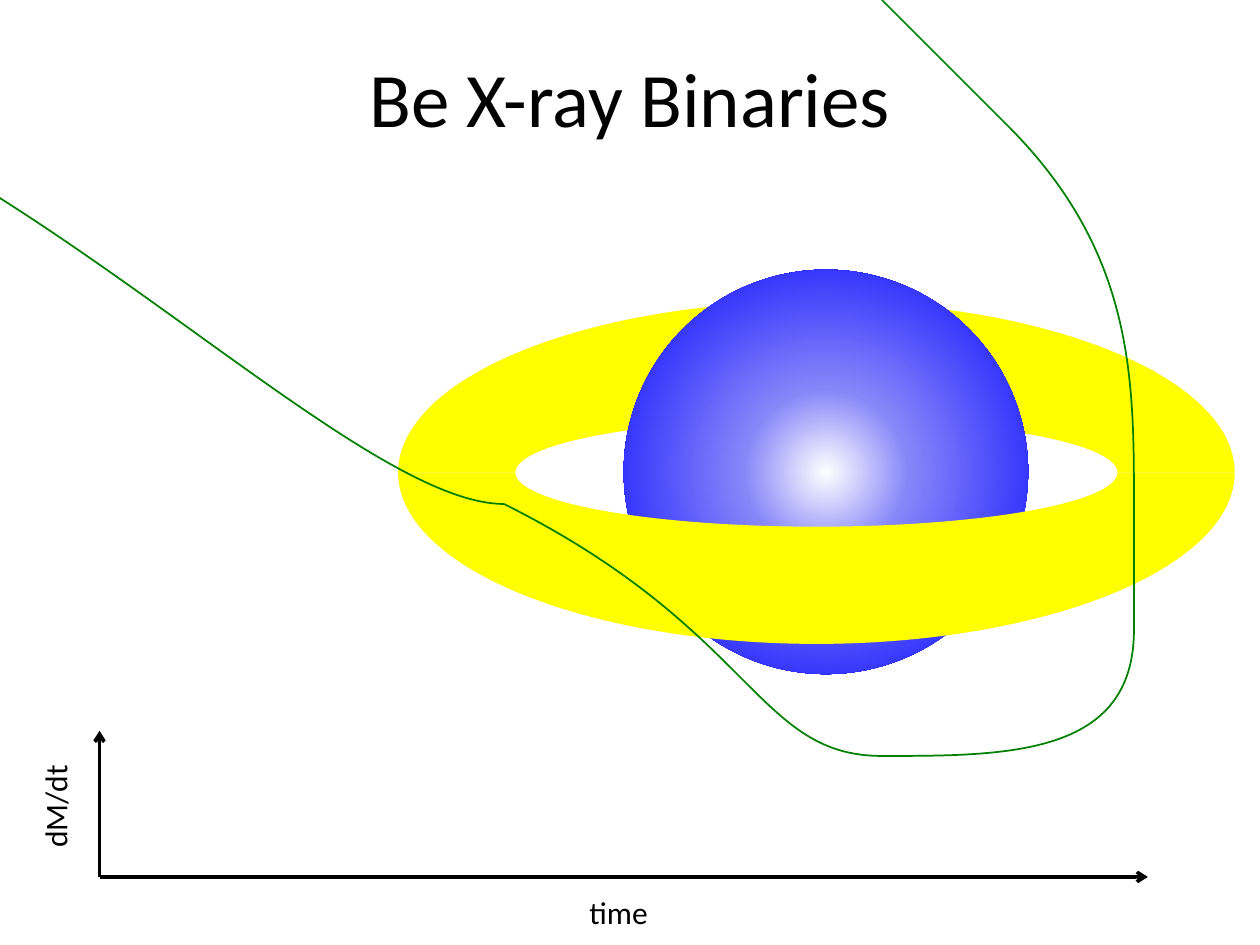
"""Build a slide showing a Be X-ray binary with its orbit and accretion-rate axes."""
from lxml import etree
from pptx import Presentation
from pptx.dml.color import RGBColor
from pptx.enum import shapes, text
from pptx.oxml import parse_xml
from pptx.oxml.ns import nsdecls, qn
from pptx.util import Inches, Pt

BLACK = RGBColor(0x00, 0x00, 0x00)
YELLOW = RGBColor(0xFF, 0xFF, 0x00)
GREEN = RGBColor(0x00, 0x80, 0x00)
STAR_STOPS = [
    (0, RGBColor(0xFF, 0xFF, 0xFF)),
    (29, RGBColor(0x86, 0x86, 0xF9)),
    (100, RGBColor(0x00, 0x00, 0xFF)),
]
ORBIT_START = (-0.59, 1.18)
ORBIT_CONTROLS = [
    (0.99, 2.33), (2.86, 3.62), (4.19, 4.37),
    (5.51, 5.12), (6.5, 5.5), (7.33, 5.67),
    (8.16, 5.83), (8.84, 5.68), (9.17, 5.37),
    (9.49, 5.06), (9.46, 4.5), (9.28, 3.83),
    (9.09, 3.16), (8.58, 2.09), (8.06, 1.35),
    (7.53, 0.62), (6.65, -0.07), (6.11, -0.57),
]


def style_arrow(shape, color, width):
    shape.line.color.rgb = color
    shape.line.width = Pt(width)
    properties = shape.element.spPr
    etree.SubElement(properties.find(qn("a:ln")), qn("a:tailEnd"), type="arrow")
    if properties.find(qn("a:effectLst")) is None:
        etree.SubElement(properties, qn("a:effectLst"))


def write_text(shape, wording, size, alignment):
    frame = shape.text_frame
    frame.text = wording
    frame.word_wrap = False
    frame.auto_size = text.MSO_AUTO_SIZE.SHAPE_TO_FIT_TEXT
    frame.vertical_anchor = text.MSO_ANCHOR.TOP
    paragraph = frame.paragraphs[0]
    paragraph.alignment = alignment
    font = paragraph.runs[0].font
    font.name = "Calibri"
    font.size = Pt(size)
    font.color.rgb = BLACK


presentation = Presentation()
presentation.slide_width = Inches(10)
presentation.slide_height = Inches(7.5)
slide = presentation.slides.add_slide(presentation.slide_layouts[5])

title = slide.shapes.title
title.left, title.top = Inches(2.81), Inches(0.35)
title.width, title.height = Inches(4.38), Inches(0.84)
write_text(title, "Be X-ray Binaries", 44, text.PP_ALIGN.CENTER)

disk_back, star, disk_front = [
    slide.shapes.add_shape(kind, *map(Inches, box))
    for kind, box in [
        (shapes.MSO_SHAPE.BLOCK_ARC, (3.16, 2.39, 6.64, 2.72)),
        (shapes.MSO_SHAPE.OVAL, (4.95, 2.14, 3.21, 3.21)),
        (shapes.MSO_SHAPE.BLOCK_ARC, (3.16, 2.39, 6.64, 2.72)),
    ]
]
for shape in (disk_back, star, disk_front):
    shape.line.fill.background()
    shape.shadow.inherit = False
for disk_half in (disk_back, disk_front):
    disk_half.fill.solid()
    disk_half.fill.fore_color.rgb = YELLOW
    for index, value in enumerate((108, 0, 0.342)):
        disk_half.adjustments[index] = value
disk_front.element.spPr.find(qn("a:xfrm")).set("flipV", "1")

stops = "".join(
    f'<a:gs pos="{position * 1000}"><a:srgbClr val="{color}"/></a:gs>'
    for position, color in STAR_STOPS
)
star.element.spPr.find(qn("a:prstGeom")).addnext(parse_xml(
    f'<a:gradFill {nsdecls("a")} rotWithShape="1"><a:gsLst>{stops}</a:gsLst>'
    '<a:path path="circle"><a:fillToRect l="50000" t="50000" r="50000" b="50000"/>'
    "</a:path></a:gradFill>"
))

builder = slide.shapes.build_freeform(*ORBIT_START, scale=Inches(1))
builder.add_line_segments(ORBIT_CONTROLS, close=False)
orbit = builder.convert_to_shape()
orbit.fill.background()
orbit.shadow.inherit = False
style_arrow(orbit, GREEN, 1)
segments = list(orbit.element.iter(qn("a:lnTo")))
for first in range(0, len(segments), 3):
    curve = etree.SubElement(segments[first].getparent(), qn("a:cubicBezTo"))
    for segment in segments[first:first + 3]:
        curve.append(segment[0])
        segment.getparent().remove(segment)

axes = slide.shapes.add_group_shape()
for end in [(0.79, 5.8), (9.11, 6.96)]:
    axis = axes.shapes.add_connector(
        shapes.MSO_CONNECTOR.STRAIGHT, *map(Inches, (0.79, 6.96, *end))
    )
    style_arrow(axis, BLACK, 2)
for wording, box, rotation in [
    ("dM/dt", (0, 6.19, 0.87, 0.4), 270),
    ("time", (4.58, 7.04, 0.67, 0.4), 0),
]:
    label = axes.shapes.add_textbox(*map(Inches, box))
    label.rotation = rotation
    write_text(label, wording, 18, text.PP_ALIGN.LEFT)

presentation.save("out.pptx")
